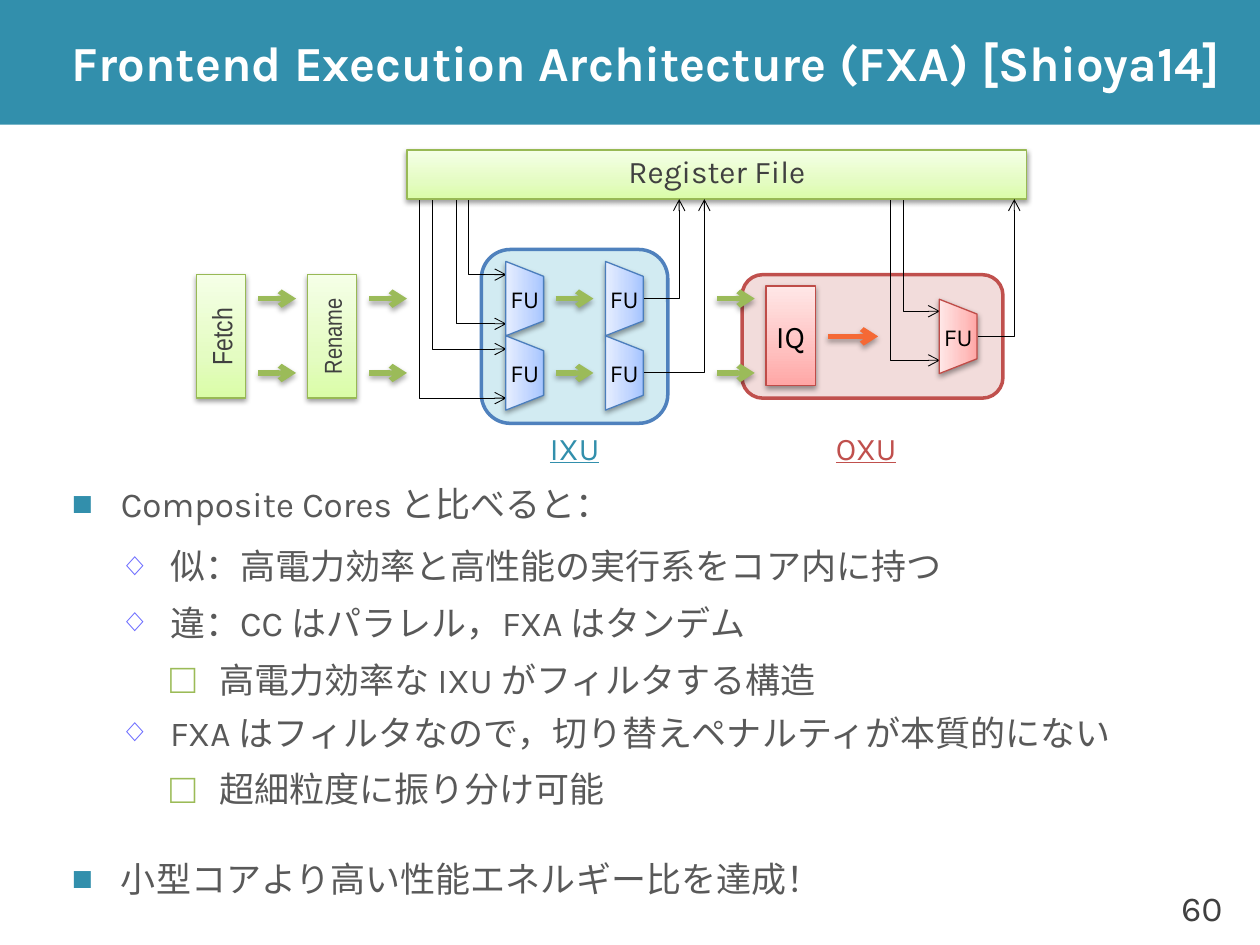
from lxml.etree import SubElement
from pptx import Presentation
from pptx.dml.color import RGBColor
from pptx.enum.shapes import MSO_CONNECTOR, MSO_SHAPE
from pptx.enum.text import MSO_ANCHOR, MSO_AUTO_SIZE, PP_ALIGN
from pptx.oxml import parse_xml
from pptx.oxml.ns import nsdecls, qn
from pptx.util import Inches, Pt

TEAL = RGBColor(0x32, 0x8F, 0xAC)
WHITE = RGBColor(0xFF, 0xFF, 0xFF)
BLACK = RGBColor(0x00, 0x00, 0x00)
DARK_GRAY = RGBColor(0x40, 0x40, 0x40)
TEXT_GRAY = RGBColor(0x59, 0x59, 0x59)
VIOLET = RGBColor(0x66, 0x66, 0xFF)
BULLET_GREEN = RGBColor(0x9B, 0xBB, 0x57)
ARROW_GREEN = RGBColor(0x9B, 0xBB, 0x59)
ORANGE = RGBColor(0xF5, 0x69, 0x35)
RED = RGBColor(0xC0, 0x50, 0x4D)
PALE_RED = RGBColor(0xF2, 0xDC, 0xDB)
BLUE = RGBColor(0x4F, 0x81, 0xBD)
PALE_BLUE = RGBColor(0xD2, 0xEB, 0xF2)

# Outline colour, then gradient colours from bottom to top
GREEN_STYLE = (RGBColor(0x98, 0xB9, 0x55), RGBColor(0xDA, 0xFD, 0xA7),
               RGBColor(0xE4, 0xFC, 0xC2), RGBColor(0xF5, 0xFF, 0xE7))
RED_STYLE = (RGBColor(0xBF, 0x4C, 0x48), RGBColor(0xFF, 0xA6, 0xA5),
             RGBColor(0xFF, 0xC0, 0xBF), RGBColor(0xFF, 0xE7, 0xE7))
BLUE_STYLE = (RGBColor(0x4B, 0x7E, 0xBC), RGBColor(0xA4, 0xC4, 0xFF),
              RGBColor(0xBF, 0xD4, 0xFF), RGBColor(0xE6, 0xEE, 0xFF))

FONT = "Karla"
NARROW = "Arial Narrow"
REGISTER_BOTTOM = 1.58
LANES = (2.37, 2.96)

# Per level: bullet, colour, size in percent, space before, space after
BULLETS = (("■", TEAL, 100, 24, 6), ("◇", VIOLET, 80, 3, 3), ("□", BULLET_GREEN, 120, 3, 1))
BODY = (
    (0, "Composite Cores と比べると："),
    (1, "似：高電力効率と高性能の実行系をコア内に持つ"),
    (1, "違：CC はパラレル，FXA はタンデム"),
    (2, "高電力効率な IXU がフィルタする構造"),
    (1, "FXA はフィルタなので，切り替えペナルティが本質的にない"),
    (2, "超細粒度に振り分け可能"),
    (0, "小型コアより高い性能エネルギー比を達成！"),
)


def place(shape, left, top, width, height):
    shape.left, shape.top = Inches(left), Inches(top)
    shape.width, shape.height = Inches(width), Inches(height)


def style_font(font, size, color, name=FONT):
    font.name, font.size = name, Pt(size)
    font.color.rgb = color


def write_text(shape, text, size, color, name=FONT, align=PP_ALIGN.CENTER):
    frame = shape.text_frame
    frame.word_wrap = False
    frame.vertical_anchor = MSO_ANCHOR.MIDDLE
    paragraph = frame.paragraphs[0]
    paragraph.text = text
    paragraph.alignment = align
    style_font(paragraph.font, size, color, name)
    return paragraph


def add_label(slide, box, text, size, color, align=PP_ALIGN.CENTER):
    label = slide.shapes.add_textbox(*map(Inches, box))
    return write_text(label, text, size, color, align=align)


def add_shadow(properties, opacity, distance):
    effects = properties.find(qn("a:effectLst"))
    if effects is None:
        effects = SubElement(properties, qn("a:effectLst"))
    effects.append(parse_xml(
        f'<a:outerShdw {nsdecls("a")} blurRad="{Pt(3.1)}" dist="{Pt(distance)}" '
        f'dir="5400000" rotWithShape="0"><a:srgbClr val="000000">'
        f'<a:alpha val="{opacity * 1000}"/></a:srgbClr></a:outerShdw>'))


def add_block(slide, box, style, kind=MSO_SHAPE.RECTANGLE):
    """Add a shaded pipeline block with a three-stop gradient and a shadow."""
    outline, *colors = style
    shape = slide.shapes.add_shape(kind, *map(Inches, box))
    shape.line.color.rgb = outline
    shape.line.width = Pt(0.75)
    shape.shadow.inherit = False
    stops = "".join(f'<a:gs pos="{position}"><a:srgbClr val="{color}"/></a:gs>'
                    for position, color in zip((0, 35000, 100000), colors))
    properties = shape._element.spPr
    properties.find(qn("a:prstGeom")).addnext(parse_xml(
        f'<a:gradFill {nsdecls("a")} rotWithShape="1"><a:gsLst>{stops}</a:gsLst>'
        '<a:lin ang="16200000" scaled="0"/></a:gradFill>'))
    add_shadow(properties, 38, 1.6)
    return shape


def set_text_direction(shape, direction):
    shape.text_frame._txBody.bodyPr.set("vert", direction)


def add_functional_unit(slide, left, top, style):
    unit = add_block(slide, (left, top, 0.59, 0.3), style, MSO_SHAPE.FLOWCHART_MANUAL_OPERATION)
    unit.rotation = 270
    write_text(unit, "FU", 14, BLACK)
    set_text_direction(unit, "vert")


def add_stage(slide, left, text, size):
    stage = add_block(slide, (left, 2.18, 0.39, 0.98), GREEN_STYLE)
    write_text(stage, text, size, DARK_GRAY, NARROW)
    set_text_direction(stage, "vert270")


def add_region(slide, box, fill, outline):
    region = slide.shapes.add_shape(MSO_SHAPE.ROUNDED_RECTANGLE, *map(Inches, box))
    region.fill.solid()
    region.fill.fore_color.rgb = fill
    region.line.color.rgb = outline
    region.line.width = Pt(2)
    region.shadow.inherit = False


def add_arrowhead(line):
    SubElement(line._get_or_add_ln(), qn("a:tailEnd"), type="arrow")


def add_flow_arrow(slide, left, y, color=ARROW_GREEN, length=0.3):
    arrow = slide.shapes.add_connector(
        MSO_CONNECTOR.STRAIGHT, *map(Inches, (left, y, left + length, y)))
    arrow.line.color.rgb = color
    arrow.line.width = Pt(3)
    add_arrowhead(arrow.line)
    add_shadow(arrow._element.spPr, 35, 1.8)


def add_wire(slide, *points):
    start, *rest = [tuple(map(Inches, point)) for point in points]
    builder = slide.shapes.build_freeform(*start)
    builder.add_line_segments(rest, close=False)
    wire = builder.convert_to_shape()
    wire.fill.background()
    wire.line.color.rgb = BLACK
    wire.line.width = Pt(0.5)
    wire.shadow.inherit = False
    add_arrowhead(wire.line)


def add_title(slide):
    title = slide.shapes.title
    place(title, 0.47, 0, 9.53, 0.99)
    paragraph = write_text(title, "Frontend Execution Architecture (FXA) [Shioya14]",
                           28, WHITE, align=PP_ALIGN.LEFT)
    paragraph.font.bold = True
    frame = title.text_frame
    frame.word_wrap = True
    frame.auto_size = MSO_AUTO_SIZE.NONE
    frame.margin_top = frame.margin_bottom = 0
    banner = slide.shapes.add_shape(MSO_SHAPE.RECTANGLE, 0, 0, Inches(10), Inches(0.99))
    banner.fill.solid()
    banner.fill.fore_color.rgb = TEAL
    banner.line.fill.background()
    banner.shadow.inherit = False
    title._element.addprevious(banner._element)


def add_body(slide):
    body = slide.placeholders[1]
    place(body, 0.47, 4.14, 9.15, 2.66)
    frame = body.text_frame
    frame.auto_size = MSO_AUTO_SIZE.NONE
    frame.vertical_anchor = MSO_ANCHOR.MIDDLE
    for index, (level, text) in enumerate(BODY):
        paragraph = frame.paragraphs[0] if index == 0 else frame.add_paragraph()
        paragraph.text = text
        paragraph.level = level
        bullet, color, percent, before, after = BULLETS[level]
        paragraph.line_spacing = 1.1
        paragraph.space_before, paragraph.space_after = Pt(before), Pt(after)
        properties = paragraph._p.get_or_add_pPr()
        properties.set("marL", str(Inches(0.39 * (level + 1))))
        properties.set("indent", str(Inches(-0.39)))
        SubElement(SubElement(properties, qn("a:buClr")), qn("a:srgbClr"), val=str(color))
        SubElement(properties, qn("a:buSzPct"), val=str(percent * 1000))
        SubElement(properties, qn("a:buChar"), char=bullet)
        style_font(paragraph.font, 20, TEXT_GRAY)


def add_pipeline(slide):
    add_region(slide, (5.89, 2.18, 2.07, 0.98), PALE_RED, RED)
    add_region(slide, (3.82, 1.98, 1.48, 1.38), PALE_BLUE, BLUE)
    for box, text, color in (((5.89, 3.36, 1.97, 0.39), "OXU", RED),
                             ((3.82, 3.36, 1.48, 0.39), "IXU", TEAL)):
        add_label(slide, box, text, 18, color).font.underline = True

    for x, y, end in ((3.72, 2.18, 4.02), (3.62, 2.57, 4.02), (3.43, 2.77, 4.02),
                      (3.33, 3.16, 4.02), (7.17, 2.47, 7.46), (7.07, 2.86, 7.46)):
        add_wire(slide, (x, REGISTER_BOTTOM), (x, y), (end, y))
    register = add_block(slide, (3.23, 1.19, 4.92, 0.39), GREEN_STYLE)
    write_text(register, "Register File", 18, DARK_GRAY).line_spacing = 0.8
    for start, y, x in ((5.1, 2.37, 5.39), (5.1, 2.96, 5.59), (7.76, 2.67, 8.05)):
        add_wire(slide, (start, y), (x, y), (x, REGISTER_BOTTOM))

    add_stage(slide, 1.56, "Fetch", 16)
    add_stage(slide, 2.44, "Rename", 14)
    queue = add_block(slide, (6.08, 2.27, 0.39, 0.79), RED_STYLE)
    write_text(queue, "IQ", 18, BLACK)
    add_flow_arrow(slide, 6.57, 2.67, ORANGE, 0.4)
    add_functional_unit(slide, 7.31, 2.52, RED_STYLE)
    for y in LANES:
        for left in (3.87, 4.66):
            add_functional_unit(slide, left, y - 0.15, BLUE_STYLE)
        for left in (2.05, 2.93, 4.41, 5.69):
            add_flow_arrow(slide, left, y)


def main():
    presentation = Presentation()
    presentation.slide_width, presentation.slide_height = Inches(10), Inches(7.5)
    slide = presentation.slides.add_slide(presentation.slide_layouts[1])
    add_title(slide)
    add_body(slide)
    add_pipeline(slide)
    add_label(slide, (9.13, 6.9, 0.67, 0.6), "60", 20, DARK_GRAY, PP_ALIGN.RIGHT)
    presentation.save("out.pptx")


if __name__ == "__main__":
    main()
